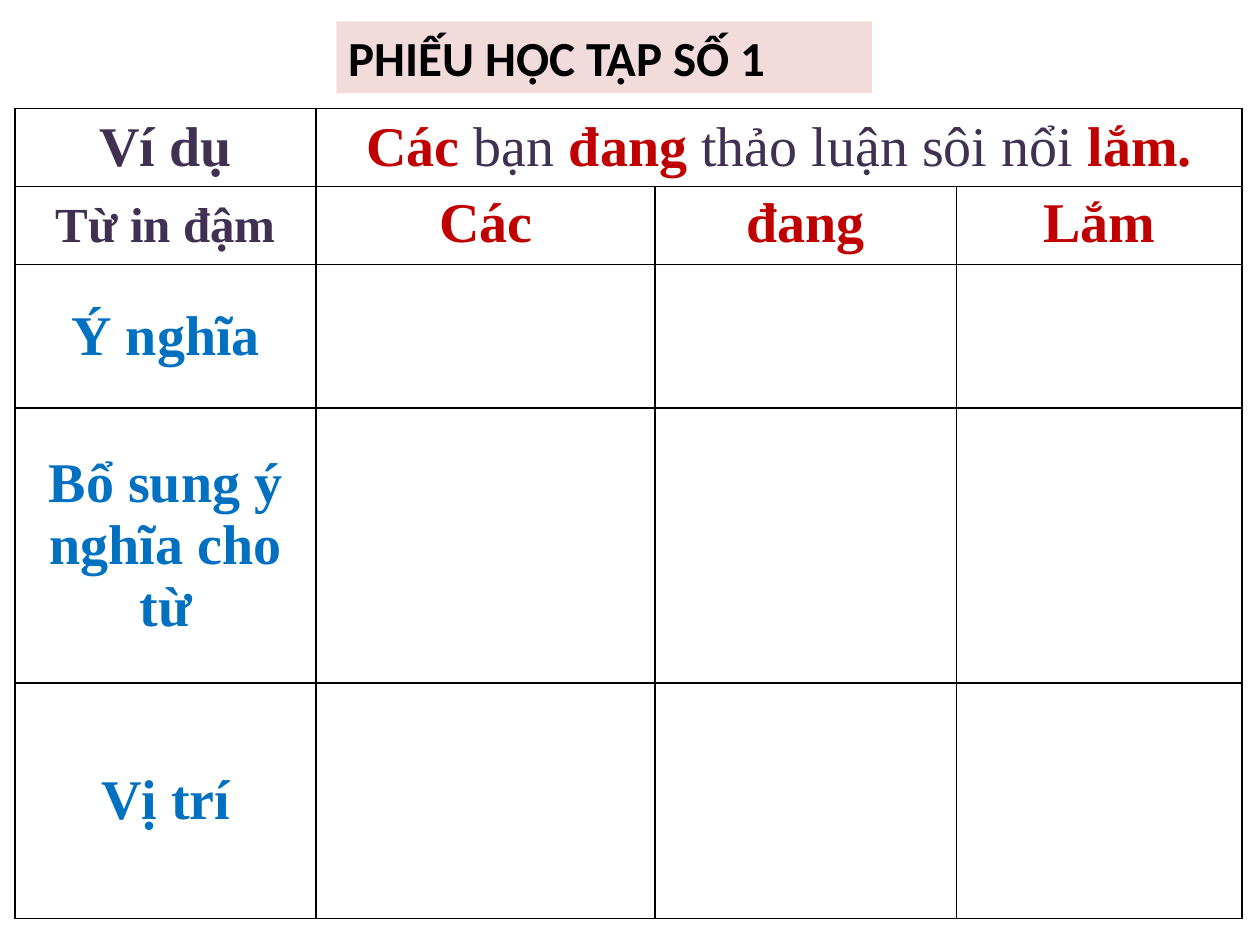
from dataclasses import dataclass

import lxml.etree
import pptx
import pptx.dml.color
import pptx.enum.shapes
import pptx.enum.text
import pptx.oxml.ns
import pptx.table
import pptx.text.text
import pptx.util

Inches = pptx.util.Inches
RGB = pptx.dml.color.RGBColor
Align = pptx.enum.text.PP_ALIGN
Anchor = pptx.enum.text.MSO_ANCHOR
qn = pptx.oxml.ns.qn

BLACK = RGB(0x00, 0x00, 0x00)
PURPLE = RGB(0x40, 0x31, 0x52)
RED = RGB(0xC0, 0x00, 0x00)
BLUE = RGB(0x00, 0x70, 0xC0)
PINK = RGB(0xF2, 0xDC, 0xDB)
SERIF = "Times New Roman"
WIDTHS = (2.39, 2.69, 2.39, 2.27)
HEIGHTS = (0.62, 0.62, 1.14, 2.18, 1.87)


@dataclass(frozen=True)
class Run:
    text: str
    color: RGB
    size: int = 32
    bold: bool = True
    font: str = SERIF


@dataclass(frozen=True)
class Entry:
    row: int
    col: int
    runs: tuple[Run, ...]
    anchor: Anchor = Anchor.MIDDLE


ENTRIES = (
    Entry(0, 0, (Run("Ví dụ", PURPLE),)),
    Entry(0, 1, (
        Run("Các ", RED),
        Run("bạn ", PURPLE, bold=False),
        Run("đang ", RED),
        Run("thảo luận sôi nổi ", PURPLE, bold=False),
        Run("lắm.", RED),
    )),
    Entry(1, 0, (Run("Từ in đậm", PURPLE, 28),)),
    *(Entry(1, col, (Run(word, RED),), Anchor.TOP)
      for col, word in enumerate(("Các", "đang", "Lắm"), 1)),
    *(Entry(row, 0, (Run(label, BLUE),))
      for row, label in enumerate(("Ý nghĩa", "Bổ sung ý nghĩa cho từ", "Vị trí"), 2)),
)


def write(para: pptx.text.text._Paragraph, runs: tuple[Run, ...]) -> None:
    for item in runs:
        run = para.add_run()
        run.text = item.text
        run.font.name = item.font
        run.font.size = pptx.util.Pt(item.size)
        run.font.bold = item.bold
        run.font.color.rgb = item.color


def frame(cell: pptx.table._Cell) -> None:
    props = cell._tc.get_or_add_tcPr()
    for side in ("lnL", "lnR", "lnT", "lnB"):
        line = lxml.etree.SubElement(props, qn(f"a:{side}"), w=str(pptx.util.Pt(1)))
        fill = lxml.etree.SubElement(line, qn("a:solidFill"))
        lxml.etree.SubElement(fill, qn("a:srgbClr"), val=str(BLACK))
    cell.fill.background()


def draw_table(slide: pptx.slide.Slide) -> None:
    table = slide.shapes.add_table(
        len(HEIGHTS), len(WIDTHS), Inches(0.12), Inches(0.86),
        Inches(sum(WIDTHS)), Inches(sum(HEIGHTS))).table
    table.first_row = False
    table.horz_banding = False
    for col, width in zip(table.columns, WIDTHS):
        col.width = Inches(width)
    for row, height in zip(table.rows, HEIGHTS):
        row.height = Inches(height)
    for cell in table.iter_cells():
        frame(cell)
    table.cell(0, 1).merge(table.cell(0, 3))
    for entry in ENTRIES:
        cell = table.cell(entry.row, entry.col)
        cell.vertical_anchor = entry.anchor
        para = cell.text_frame.paragraphs[0]
        para.alignment = Align.CENTER
        write(para, entry.runs)


def draw_title(slide: pptx.slide.Slide) -> None:
    box = slide.shapes.add_shape(
        pptx.enum.shapes.MSO_SHAPE.RECTANGLE,
        Inches(2.67), Inches(0.17), Inches(4.25), Inches(0.57))
    box.shadow.inherit = False
    box.fill.solid()
    box.fill.fore_color.rgb = PINK
    box.line.fill.background()
    text = box.text_frame
    text.word_wrap = True
    text.vertical_anchor = Anchor.TOP
    para = text.paragraphs[0]
    para.alignment = Align.LEFT
    write(para, (Run("PHIẾU HỌC TẬP SỐ 1", BLACK, 28, font="Calibri"),))


def main() -> None:
    deck = pptx.Presentation()
    deck.slide_width = Inches(10)
    deck.slide_height = Inches(7.5)
    slide = deck.slides.add_slide(deck.slide_layouts[6])
    draw_table(slide)
    draw_title(slide)
    deck.save("out.pptx")


if __name__ == "__main__":
    main()
